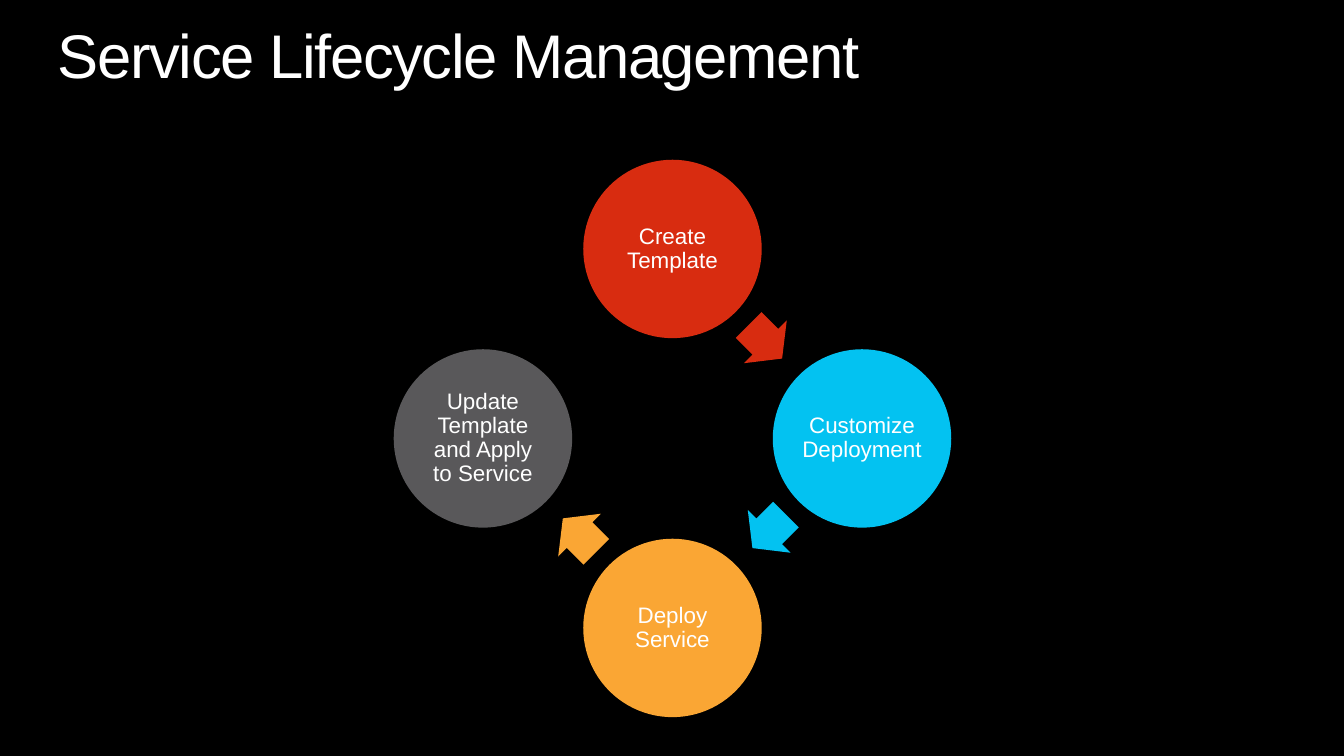
from math import cos, radians, sin

from pptx import Presentation
from pptx.dml.color import RGBColor
from pptx.enum.shapes import MSO_SHAPE
from pptx.enum.text import MSO_ANCHOR, PP_ALIGN
from pptx.util import Inches, Pt

OVAL, RIGHT_ARROW = MSO_SHAPE.OVAL, MSO_SHAPE.RIGHT_ARROW
TOP, MIDDLE = MSO_ANCHOR.TOP, MSO_ANCHOR.MIDDLE
LEFT, CENTER = PP_ALIGN.LEFT, PP_ALIGN.CENTER

BLACK = RGBColor(0x00, 0x00, 0x00)
WHITE = RGBColor(0xFF, 0xFF, 0xFF)
RED = RGBColor(0xD8, 0x2C, 0x10)
BLUE = RGBColor(0x03, 0xC2, 0xF1)
ORANGE = RGBColor(0xFA, 0xA6, 0x34)
GRAY = RGBColor(0x59, 0x58, 0x5A)

CENTER_X, CENTER_Y, RADIUS = 6.67, 4.35, 1.88
CIRCLE_SIZE = 1.77
ARROW_WIDTH, ARROW_HEIGHT = 0.47, 0.6
ARROW_POSITION = 0.49  # share of the way from one stage to the next

STAGES = [
    ("Create Template", RED),
    ("Customize\nDeployment", BLUE),
    ("Deploy\nService", ORANGE),
    ("Update Template and Apply to Service", GRAY),
]


def write_text(frame, text, size, align, anchor, inset):
    frame.text = text
    frame_format = {"word_wrap": True, "vertical_anchor": anchor,
                    "margin_left": inset, "margin_right": inset,
                    "margin_top": inset, "margin_bottom": inset}
    for name, value in frame_format.items():
        setattr(frame, name, value)
    for paragraph in frame.paragraphs:
        paragraph.alignment = align
        paragraph.line_spacing = 0.9
        paragraph.space_before = paragraph.space_after = Pt(0)
        for run in paragraph.runs:
            run.font.name = "Arial"
            run.font.size = Pt(size)
            run.font.color.rgb = WHITE


def add_filled(kind, x, y, width, height, color):
    """Add a flat shape centred on x, y."""
    shape = slide.shapes.add_shape(
        kind, Inches(x - width / 2), Inches(y - height / 2), Inches(width), Inches(height))
    shape.shadow.inherit = False
    shape.fill.solid()
    shape.fill.fore_color.rgb = color
    shape.line.fill.background()
    return shape


# Slide and background
prs = Presentation()
prs.slide_width, prs.slide_height = Inches(13.33), Inches(7.5)
slide = prs.slides.add_slide(prs.slide_layouts[5])
slide.background.fill.solid()
slide.background.fill.fore_color.rgb = BLACK

# Title, with tightened letters
title = slide.shapes.title
title.left, title.top = Inches(0.57), Inches(0.25)
title.width, title.height = Inches(12.19), Inches(0.67)
write_text(title.text_frame, "Service Lifecycle Management", 44, LEFT, TOP, 0)
title.text_frame.paragraphs[0].runs[0].font._element.set("spc", "-100")

# Stages clockwise from the top
centers = []
for index in range(len(STAGES)):
    angle = radians(90 * index - 90)
    centers.append((CENTER_X + RADIUS * cos(angle), CENTER_Y + RADIUS * sin(angle)))

for index, (label, color) in enumerate(STAGES):
    x, y = centers[index]
    circle = add_filled(OVAL, x, y, CIRCLE_SIZE, CIRCLE_SIZE, color)
    write_text(circle.text_frame, label, 16, CENTER, MIDDLE, Inches(0.02))

    # Arrow to the next stage; the last stage has none
    if index < len(STAGES) - 1:
        next_x, next_y = centers[index + 1]
        arrow = add_filled(RIGHT_ARROW, x + (next_x - x) * ARROW_POSITION,
                           y + (next_y - y) * ARROW_POSITION,
                           ARROW_WIDTH, ARROW_HEIGHT, color)
        arrow.rotation = 45 + 90 * index
        arrow.adjustments[0], arrow.adjustments[1] = 0.6, 0.5

prs.save("out.pptx")
